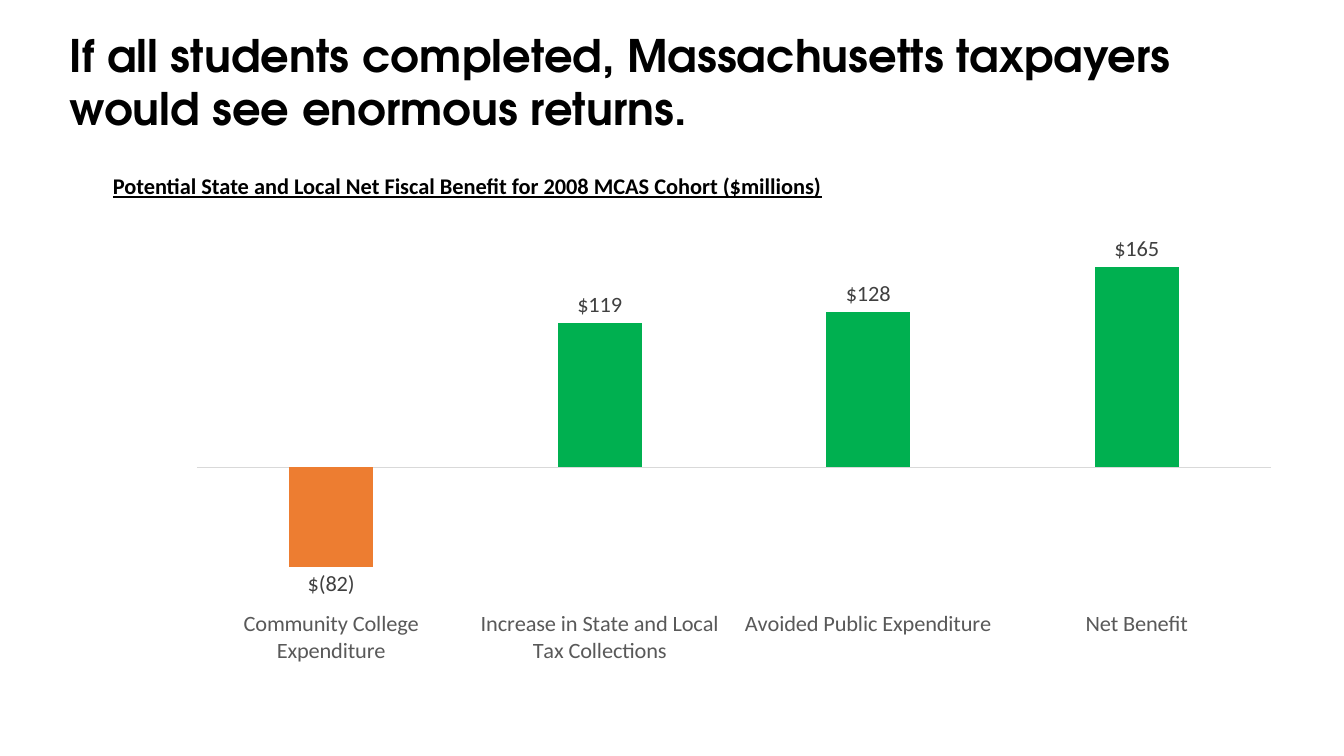
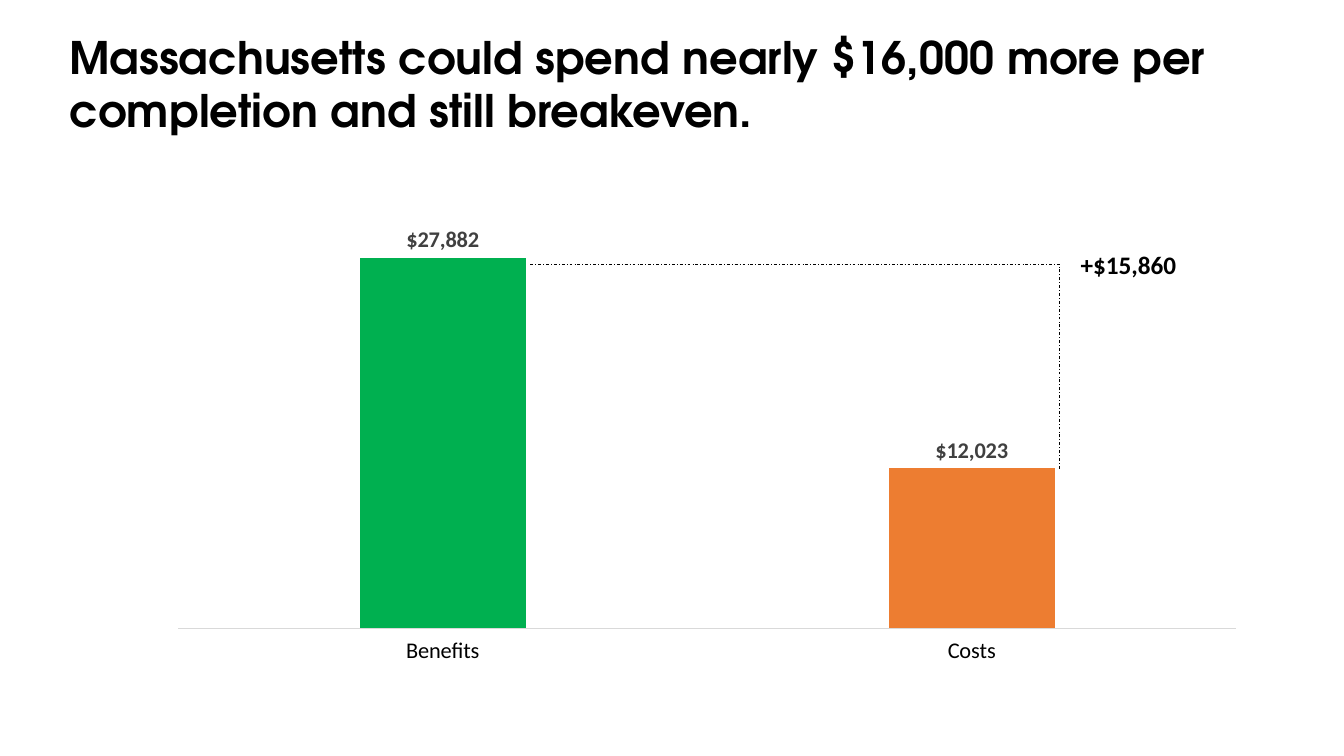
from lxml import etree
from pptx import Presentation
from pptx.chart.data import CategoryChartData
from pptx.dml.color import RGBColor
from pptx.enum import chart as ch, dml, shapes
from pptx.oxml import parse_xml
from pptx.oxml.ns import nsdecls, qn
from pptx.util import Inches, Pt

GREEN, ORANGE = "00B050", "ED7D31"
BLACK, DARK, GREY, PALE = "000000", "404040", "595959", "D9D9D9"
HEAD, BODY = "TeX Gyre Adventor", "Calibri"
MONEY = '"$"#,##0;"$("#,##0")"'


def style(font, size, color, name=BODY, bold=False):
    font.size, font.name, font.bold = Pt(size), name, bold
    font.color.rgb = RGBColor.from_string(color)


def add_text(slide, box, words, size, name=BODY, wrap=False):
    frame = slide.shapes.add_textbox(*map(Inches, box)).text_frame
    frame.word_wrap = wrap
    para = frame.paragraphs[0]
    para.text = words
    style(para.font, size, BLACK, name, True)
    return frame


prs = Presentation()
prs.slide_width, prs.slide_height = Inches(13.33), Inches(7.5)

pages = [
    dict(title="If all students completed, Massachusetts taxpayers would see enormous returns.",
         head=(0.56, 0.2, 12.47, 1.21), box=(1.02, 1.91, 11.81, 4.68),
         bars=[("Community College Expenditure", -82, ORANGE),
               ("Increase in State and Local Tax Collections", 119, GREEN),
               ("Avoided Public Expenditure", 128, GREEN),
               ("Net Benefit", 165, GREEN)],
         span=(-110, 200), tone=GREY, bold=False),
    dict(title="Massachusetts could spend nearly $16,000 more per completion and still breakeven.",
         head=(0.56, 0.22, 12.67, 1.21), box=(1.55, 2.19, 10.93, 4.5),
         bars=[("Benefits", 27882, GREEN), ("Costs", 12023, ORANGE)],
         span=(0, 30000), tone=BLACK, bold=True),
]

slides, charts = [], []
for page in pages:
    slide = prs.slides.add_slide(prs.slide_layouts[6])
    names, values, fills = zip(*page["bars"])
    data = CategoryChartData()
    data.categories = names
    data.add_series("Series 1", values)
    chart = slide.shapes.add_chart(ch.XL_CHART_TYPE.COLUMN_CLUSTERED,
                                   *map(Inches, page["box"]), data).chart
    chart.has_legend = chart.has_title = False
    style(chart.font, 10, BLACK)

    cat, val = chart.category_axis, chart.value_axis
    cat.major_tick_mark = ch.XL_TICK_MARK.NONE
    cat.tick_label_position = ch.XL_TICK_LABEL_POSITION.LOW
    style(cat.tick_labels.font, 16, page["tone"])
    cat.format.line.color.rgb = RGBColor.from_string(PALE)
    cat.format.line.width = Pt(0.75)
    val.visible = val.has_major_gridlines = False
    val.minimum_scale, val.maximum_scale = page["span"]

    plot = chart.plots[0]
    plot.gap_width, plot.overlap = 219, -27
    plot.vary_by_categories = False
    series = plot.series[0]
    series.invert_if_negative = False
    for i, color in enumerate(fills):
        fill = series.points[i].format.fill
        fill.solid()
        fill.fore_color.rgb = RGBColor.from_string(color)
    labels = series.data_labels
    labels.show_value = True
    labels.position = ch.XL_LABEL_POSITION.OUTSIDE_END
    labels.number_format, labels.number_format_is_linked = MONEY, False
    style(labels.font, 16, DARK, bold=page["bold"])

    frame = add_text(slide, page["head"], page["title"], 32, HEAD, True)
    frame.margin_left = frame.margin_right = Inches(0.13)
    frame.margin_top = frame.margin_bottom = Inches(0.07)
    slides.append(slide)
    charts.append(chart)

# Returns: fixed plot area and chart heading
area = charts[0]._chartSpace.find(".//" + qn("c:plotArea"))
for old in area.findall(qn("c:layout")):
    area.remove(old)
places = [("layoutTarget", "inner"), ("xMode", "edge"), ("yMode", "edge"),
          ("x", 0.079), ("y", 0.069), ("w", 0.902), ("h", 0.821)]
inner = "".join(f'<c:{tag} val="{value}"/>' for tag, value in places)
area.insert(0, parse_xml(f'<c:layout {nsdecls("c")}><c:manualLayout>{inner}'
                         '</c:manualLayout></c:layout>'))
frame = add_text(slides[0], (1.02, 1.66, 7.25, 0.4),
                 "Potential State and Local Net Fiscal Benefit for 2008 MCAS Cohort ($millions)", 16)
frame.paragraphs[0].font.underline = True

# Breakeven: dashed bracket from benefits to costs
group = slides[1].shapes.add_group_shape()
for ends in [(5.26, 2.62, 10.51, 2.62), (10.51, 4.65, 10.51, 2.62)]:
    line = group.shapes.add_connector(shapes.MSO_CONNECTOR.STRAIGHT, *map(Inches, ends))
    line.line.color.rgb = RGBColor.from_string(BLACK)
    line.line.width = Pt(0.5)
    line.line.dash_style = dml.MSO_LINE.DASH_DOT
    etree.SubElement(line._element.spPr, qn("a:effectLst"))
add_text(slides[1], (10.62, 2.42, 1.16, 0.4), "+$15,860", 18)

prs.save("out.pptx")
